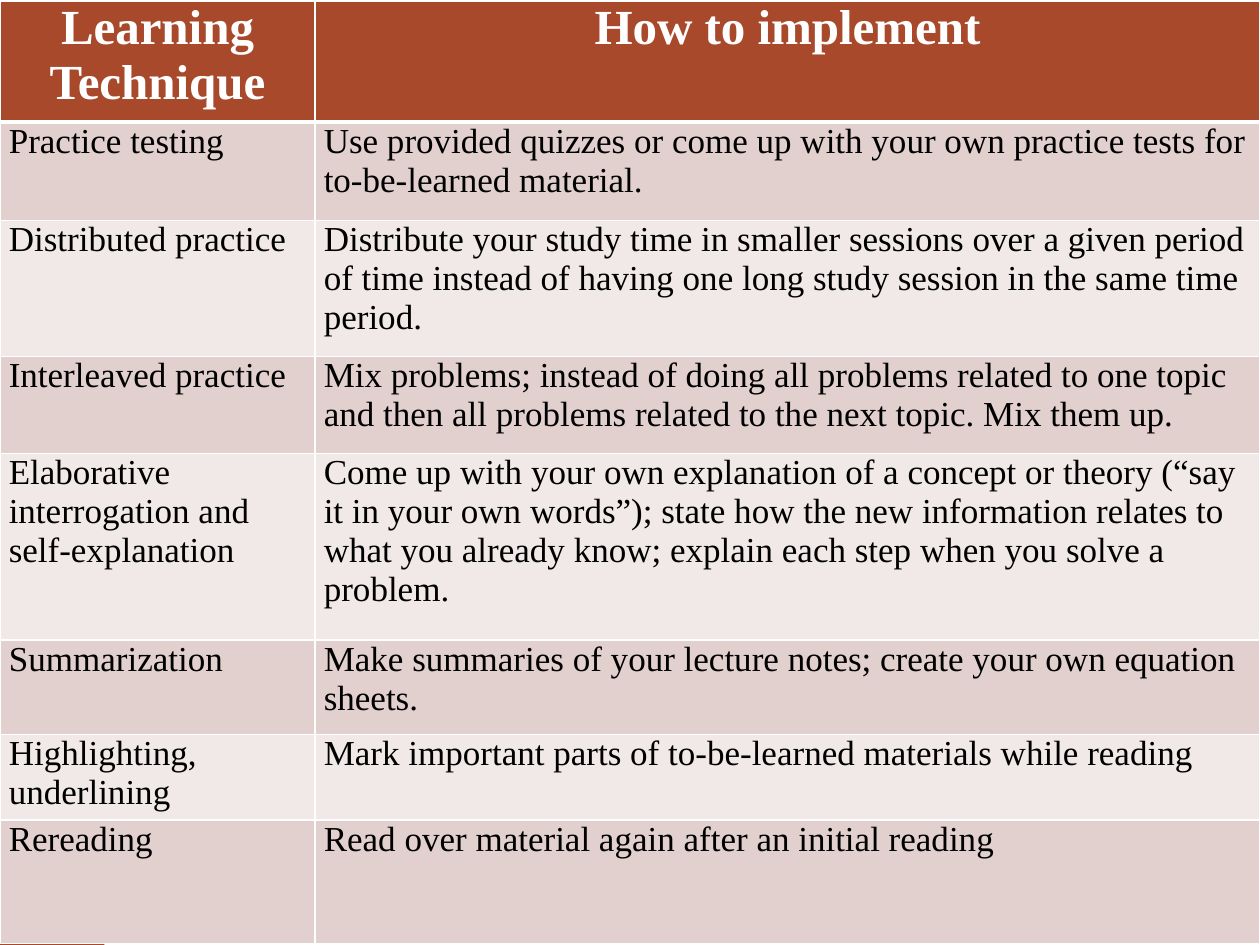
"""Build a slide with a table of learning techniques and how to use them."""
import pptx
import pptx.dml.color
import pptx.enum.shapes
import pptx.enum.text
import pptx.oxml.ns
import pptx.util
import lxml.etree

Inches, Pt = pptx.util.Inches, pptx.util.Pt
HEX = {"rust": "A8492B", "rose": "E1D0CD", "pale": "F1E9E8",
       "white": "FFFFFF", "black": "000000"}
FONT = "Times New Roman"
HEAD = ("Learning Technique", "How to implement")
ROWS = [
    ("Practice testing",
     "Use provided quizzes or come up with your own practice tests for to-be-learned material."),
    ("Distributed practice",
     "Distribute your study time in smaller sessions over a given period of time "
     "instead of having one long study session in the same time period."),
    ("Interleaved practice",
     "Mix problems; instead of doing all problems related to one topic and then "
     "all problems related to the next topic. Mix them up."),
    ("Elaborative interrogation and self-explanation",
     "Come up with your own explanation of a concept or theory (“say it in your own words”); "
     "state how the new information relates to what you already know; "
     "explain each step when you solve a problem."),
    ("Summarization",
     "Make summaries of your lecture notes; create your own equation sheets."),
    ("Highlighting, underlining",
     "Mark important parts of to-be-learned materials while reading"),
    ("Rereading", "Read over material again after an initial reading"),
]
WIDTHS = (2.5, 7.5)
HEIGHTS = (0.96, 0.78, 1.08, 0.77, 1.48, 0.75, 0.68, 0.98)
TIGHT = {(0, 0), (0, 1), (1, 0), (2, 0), (3, 0), (3, 1)}
BANDS = [(0, 0, 0.83, 7.5), (0.75, 0, 2.75, 1.17)]


def color(name):
    return pptx.dml.color.RGBColor.from_string(HEX[name])


def paint(fill, name):
    fill.solid()
    fill.fore_color.rgb = color(name)


def write(frame, text, size=20, ink="black", bold=False, align="LEFT", gap=4):
    para = frame.paragraphs[0]
    para.alignment = getattr(pptx.enum.text.PP_ALIGN, align)
    para.space_before = para.space_after = Pt(gap)
    run = para.add_run()
    run.text = text
    run.font.name, run.font.size, run.font.bold = FONT, Pt(size), bold
    run.font.color.rgb = color(ink)


def edge(cell, sides):
    props = cell._tc.get_or_add_tcPr()
    for side, width in sides.items():
        line = lxml.etree.SubElement(
            props, pptx.oxml.ns.qn("a:ln" + side), w=str(Pt(width)))
        fill = lxml.etree.SubElement(line, pptx.oxml.ns.qn("a:solidFill"))
        lxml.etree.SubElement(fill, pptx.oxml.ns.qn("a:srgbClr"), val=HEX["white"])


def main():
    deck = pptx.Presentation()
    deck.slide_width, deck.slide_height = Inches(10), Inches(7.5)
    slide = deck.slides.add_slide(deck.slide_layouts[6])

    for box in BANDS:
        band = slide.shapes.add_shape(
            pptx.enum.shapes.MSO_SHAPE.RECTANGLE, *map(Inches, box))
        band.shadow.inherit = False
        paint(band.fill, "rust")
        band.line.fill.background()

    data = [HEAD] + ROWS
    table = slide.shapes.add_table(
        len(data), len(HEAD), 0, Inches(0.01), Inches(10), Inches(sum(HEIGHTS))).table
    for col, width in zip(table.columns, WIDTHS):
        col.width = Inches(width)
    for row, height in zip(table.rows, HEIGHTS):
        row.height = Inches(height)

    for r, texts in enumerate(data):
        for c, text in enumerate(texts):
            cell = table.cell(r, c)
            cell.margin_left = cell.margin_right = Inches(0.07)
            cell.margin_top = cell.margin_bottom = 0
            edge(cell, {"L": 1, "R": 1, "T": 3 if r == 1 else 1, "B": 3 if r == 0 else 1})
            paint(cell.fill, "rust" if r == 0 else "rose" if r % 2 else "pale")
            look = dict(size=28, ink="white", bold=True, align="CENTER") if r == 0 else {}
            write(cell.text_frame, text, gap=3 if (r, c) in TIGHT else 4, **look)

    deck.save("out.pptx")


if __name__ == "__main__":
    main()
